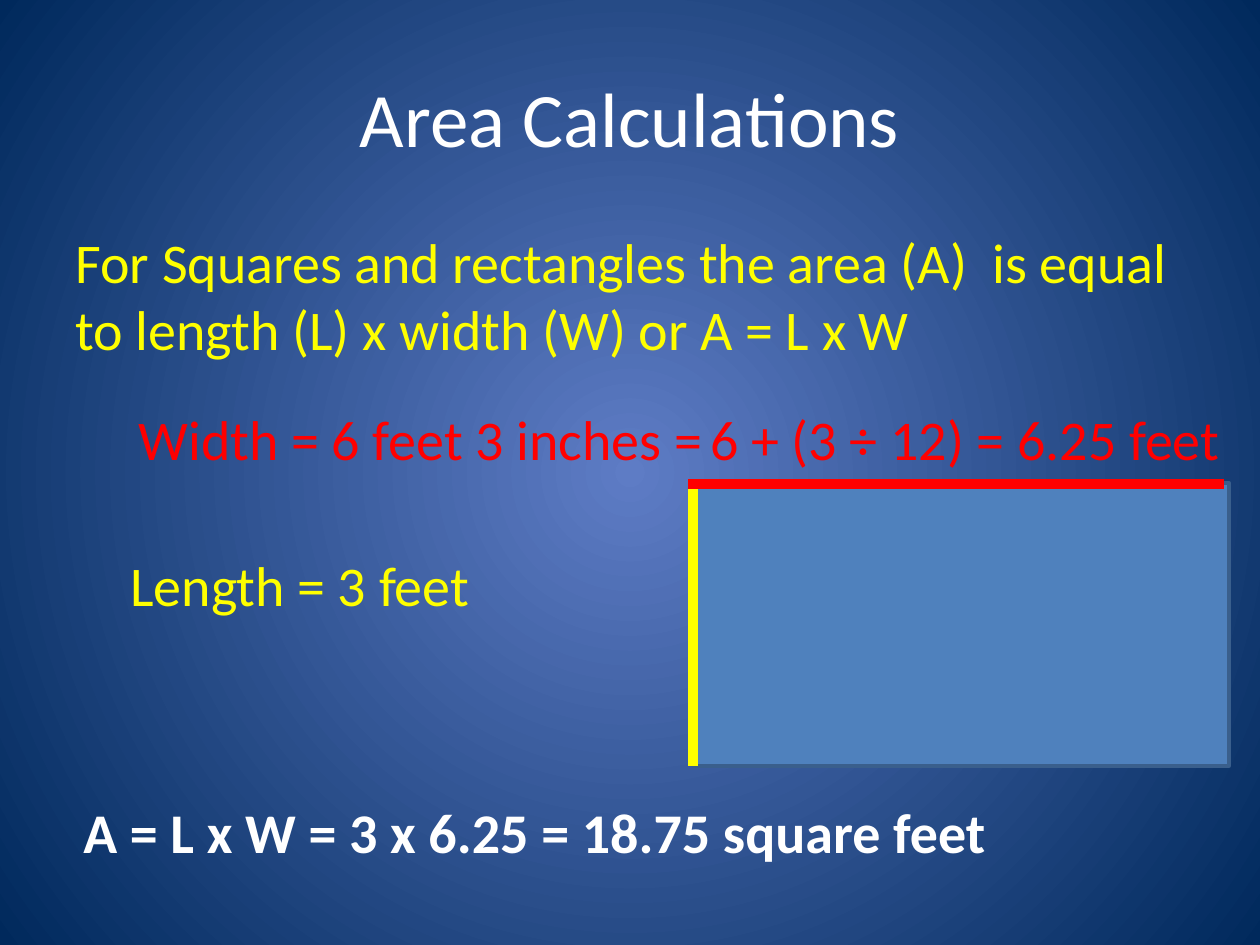
from lxml.etree import SubElement
from pptx import Presentation
from pptx.dml.color import RGBColor
from pptx.enum.shapes import MSO_CONNECTOR as CONNECTOR, MSO_SHAPE as SHAPE
from pptx.enum.text import MSO_ANCHOR as ANCHOR, PP_ALIGN as ALIGN
from pptx.oxml.ns import qn
from pptx.util import Emu, Pt

PX = 914400 / 126
WHITE, YELLOW, RED = "FFFFFF", "FFFF00", "FF0000"


def px(*lengths):
    return [Emu(round(length * PX)) for length in lengths]


def color(hex_string):
    return RGBColor.from_string(hex_string)


def set_radial_background(slide, center, edge):
    fill = slide.background.fill
    fill.gradient()
    for stop, position, hex_string in zip(fill.gradient_stops, (0, 1), (center, edge)):
        stop.position = position
        stop.color.rgb = color(hex_string)
    # Swap the linear direction for a circle around the middle
    gradient = slide.element.find(".//" + qn("a:gradFill"))
    gradient.remove(gradient.find(qn("a:lin")))
    circle = SubElement(gradient, qn("a:path"), path="circle")
    SubElement(circle, qn("a:fillToRect"), dict.fromkeys("ltrb", "50000"))


def add_text(slide, box, text, hex_string, size=32, bold=False, wrap=False,
             align=ALIGN.LEFT, anchor=ANCHOR.TOP, space_before=0):
    frame = slide.shapes.add_textbox(*px(*box)).text_frame
    frame.word_wrap = wrap
    frame.vertical_anchor = anchor
    paragraph = frame.paragraphs[0]
    paragraph.text = text
    paragraph.alignment = align
    paragraph.space_before = Pt(space_before)
    font = paragraph.font
    font.name, font.size, font.bold = "Calibri", Pt(size), bold
    font.color.rgb = color(hex_string)


def add_rectangle(slide, box, fill, outline):
    shape = slide.shapes.add_shape(SHAPE.RECTANGLE, *px(*box))
    shape.shadow.inherit = False
    shape.fill.solid()
    shape.fill.fore_color.rgb = color(fill)
    shape.line.color.rgb = color(outline)
    shape.line.width = Pt(2)


def add_side(slide, ends, hex_string):
    line = slide.shapes.add_connector(CONNECTOR.STRAIGHT, *px(*ends))
    line.line.color.rgb = color(hex_string)
    line.line.width = Pt(6)
    SubElement(line.element.spPr, qn("a:effectLst"))


def main():
    presentation = Presentation()
    presentation.slide_width, presentation.slide_height = px(1260, 945)
    slide = presentation.slides.add_slide(presentation.slide_layouts[6])
    set_radial_background(slide, "5E7CC5", "00295C")

    # Title and rule
    add_text(slide, (63, 38, 1134, 158), "Area Calculations", WHITE, size=44,
             wrap=True, align=ALIGN.CENTER, anchor=ANCHOR.MIDDLE)
    add_text(slide, (63, 221, 1134, 624),
             "For Squares and rectangles the area (A)  is equal to length (L) x width (W) "
             "or A = L x W", YELLOW, wrap=True, space_before=6.4)

    # Rectangle with its length and width marked
    add_rectangle(slide, (693, 483, 536, 283), "4F81BD", "3A5F8C")
    add_text(slide, (118, 544, 368, 81), "Length = 3 feet", YELLOW)
    add_side(slide, (693, 483, 693, 766), YELLOW)
    add_text(slide, (126, 398, 596, 81), "Width = 6 feet 3 inches =", RED)
    add_side(slide, (1224, 484, 688, 484), RED)

    # Result and conversion to feet
    add_text(slide, (71, 791, 950, 81), "A = L x W = 3 x 6.25 = 18.75 square feet",
             WHITE, bold=True)
    add_text(slide, (698, 398, 553, 81), "6 + (3 ÷ 12) = 6.25 feet", RED)

    presentation.save("out.pptx")


if __name__ == "__main__":
    main()
